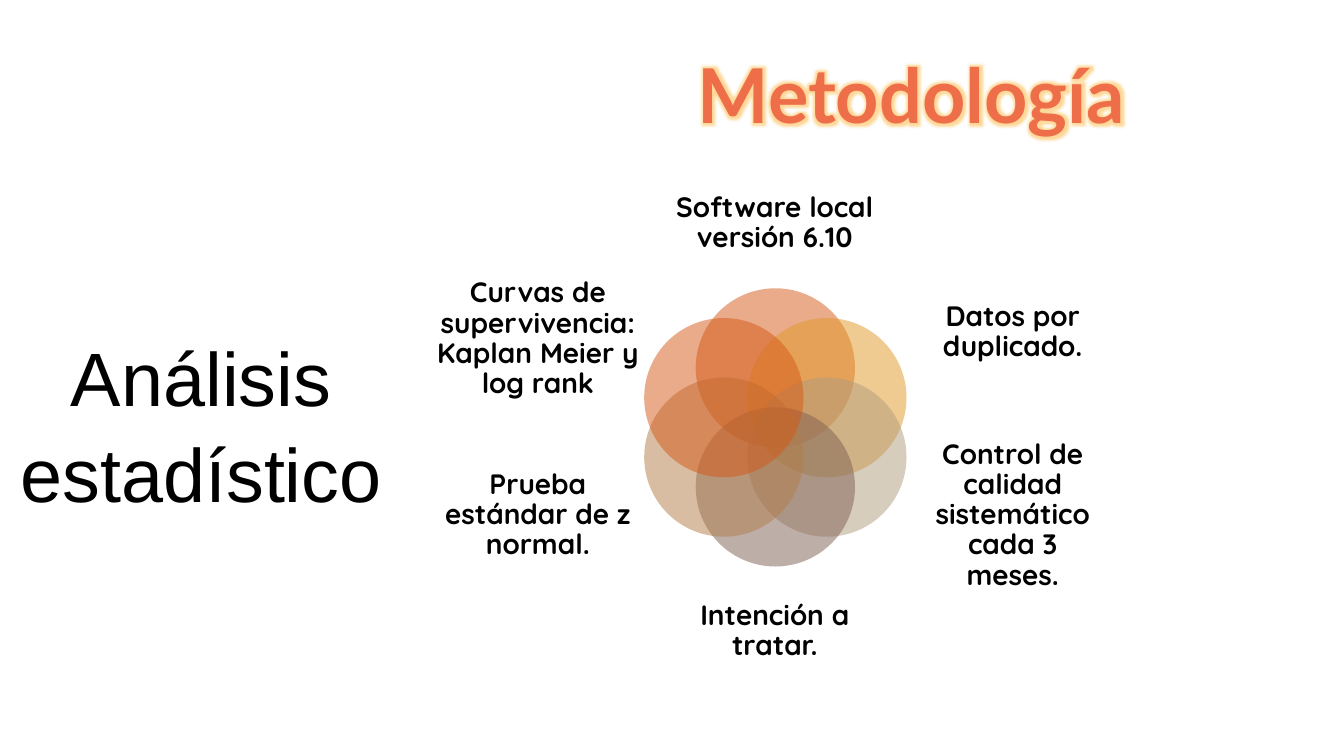
import math

from lxml import etree
from pptx import Presentation
from pptx.dml.color import RGBColor
from pptx.enum import shapes, text
from pptx.oxml import ns
from pptx.util import Inches, Pt

# Ring of petals: centre, distance of petals from it, petal diameter
RING_X, RING_Y, RING_RADIUS, PETAL = 7.69, 4.24, 0.59, 1.58

# Clockwise from the top: colour, label, label box
STEPS = [
    ("D55816", "Software local versión 6.10", (6.7, 1.68, 1.97, 1.07)),
    ("E19825", "Datos por duplicado.", (9.11, 2.71, 1.87, 1.18)),
    ("B19C7D", "Control de calidad sistemático cada 3 meses.", (9.11, 4.46, 1.87, 1.31)),
    ("7F5F52", "Intención a tratar.", (6.7, 5.73, 1.97, 1.07)),
    ("B27D49", "Prueba estándar de z normal.", (4.4, 4.46, 1.87, 1.31)),
    ("D55816", "Curvas de supervivencia: Kaplan Meier y log rank", (4.19, 2.71, 2.29, 1.31)),
]

LABEL = {"name": "Quicksand", "size": Pt(20), "bold": True}
TITLE = {"name": "Lato", "size": Pt(54), "bold": True}
SUBTITLE = {"name": "Arial", "size": Pt(54), "bold": False}


def rgb(value):
    return RGBColor.from_string(value)


def add_alpha(colour, percent):
    etree.SubElement(colour, ns.qn("a:alpha"), val=str(percent * 1000))


def add_petal(slide, index, colour):
    angle = math.radians(60 * index)
    left = RING_X + RING_RADIUS * math.sin(angle) - PETAL / 2
    top = RING_Y - RING_RADIUS * math.cos(angle) - PETAL / 2
    petal = slide.shapes.add_shape(
        shapes.MSO_SHAPE.OVAL, Inches(left), Inches(top), Inches(PETAL), Inches(PETAL))
    petal.shadow.inherit = False
    petal.line.fill.background()
    petal.fill.solid()
    petal.fill.fore_color.rgb = rgb(colour)
    add_alpha(petal.fill._xPr.find(".//" + ns.qn("a:srgbClr")), 50)


def add_text(slide, words, box, font_values, colour="000000", spacing=1.0, inset=0.1):
    frame = slide.shapes.add_textbox(*map(Inches, box)).text_frame
    frame_values = {
        "word_wrap": True,
        "vertical_anchor": text.MSO_ANCHOR.MIDDLE,
        "margin_left": Inches(inset),
        "margin_right": Inches(inset),
        "margin_top": Inches(inset / 2),
        "margin_bottom": Inches(inset / 2),
    }
    for key, value in frame_values.items():
        setattr(frame, key, value)
    paragraph = frame.paragraphs[0]
    paragraph.alignment = text.PP_ALIGN.CENTER
    paragraph.line_spacing = spacing
    run = paragraph.add_run()
    run.text = words
    for key, value in font_values.items():
        setattr(run.font, key, value)
    run.font.color.rgb = rgb(colour)
    return run


def add_glow(run, colour, radius, percent):
    effects = etree.Element(ns.qn("a:effectLst"))
    glow = etree.SubElement(effects, ns.qn("a:glow"), rad=str(radius))
    add_alpha(etree.SubElement(glow, ns.qn("a:srgbClr"), val=colour), percent)
    # Effects must follow the fill in the run properties
    run.font._element.find(ns.qn("a:solidFill")).addnext(effects)


def main():
    deck = Presentation()
    deck.slide_width, deck.slide_height = Inches(13.33), Inches(7.5)
    slide = deck.slides.add_slide(deck.slide_layouts[6])

    # Ring of overlapping petals with their labels
    for index, (colour, label, box) in enumerate(STEPS):
        add_petal(slide, index, colour)
        add_text(slide, label, box, LABEL, spacing=0.9, inset=0)

    # Headings
    title = add_text(slide, "Metodología", (4.77, 0.49, 8.54, 0.87), TITLE, "EE6E4A")
    add_glow(title, "FFC055", Pt(8), 60)
    add_text(slide, "Análisis estadístico", (-0.04, 3.75, 4.07, 0.87), SUBTITLE, spacing=1.06)

    deck.save("out.pptx")


if __name__ == "__main__":
    main()
